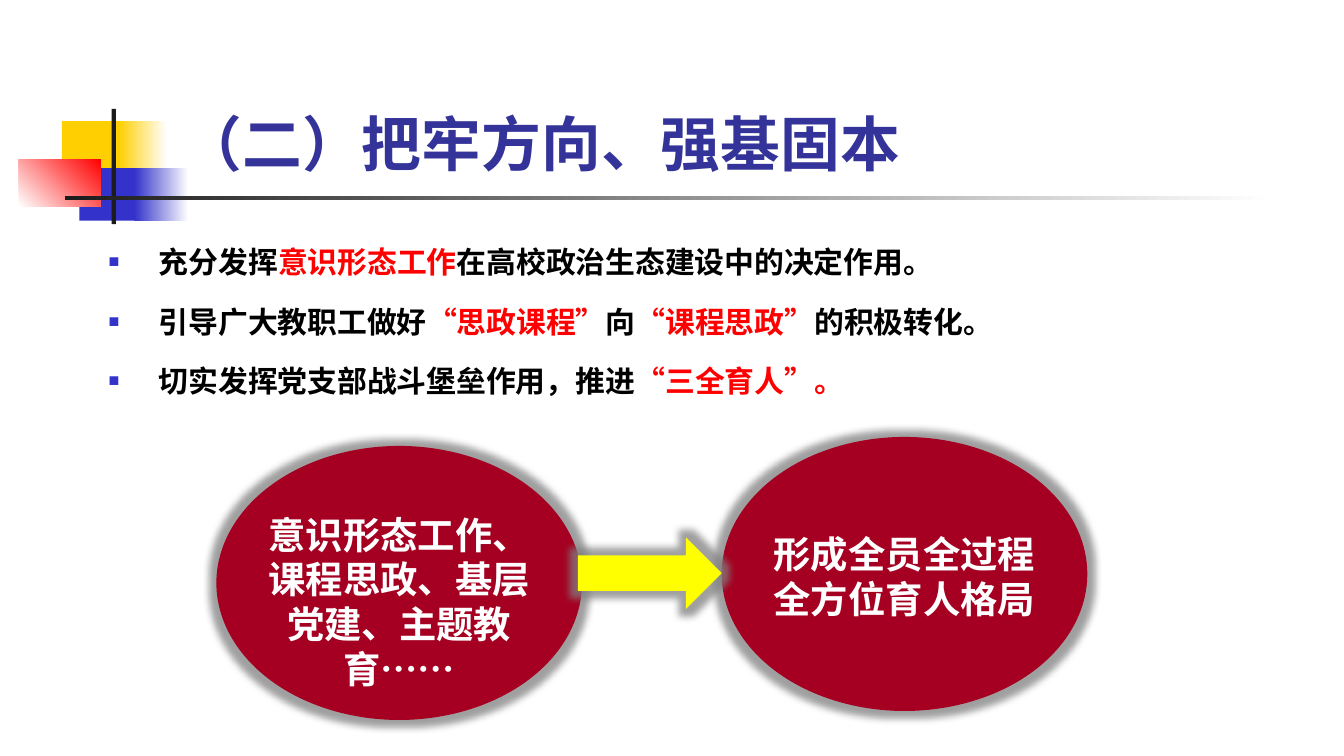
from lxml.etree import SubElement
from pptx import Presentation
from pptx.dml.color import RGBColor
from pptx.enum.shapes import MSO_SHAPE
from pptx.enum.text import MSO_ANCHOR, MSO_AUTO_SIZE, PP_ALIGN
from pptx.oxml.ns import qn
from pptx.util import Cm, Pt

HUES = {
    "gold": "FFCF01", "blue": "3333CC", "red": "FF0000", "dark": "1C1C1C",
    "navy": "333399", "wine": "A50021", "yellow": "FFFF00",
    "black": "000000", "white": "FFFFFF", "gray": "808080",
}
HAN = "Noto Sans CJK SC"


def rgb(hue):
    return RGBColor.from_string(HUES[hue])


def write(para, text, size=16, font=HAN, hue="black", bold=True):
    run = para.add_run()
    run.text = text
    run.font.size = Pt(size)
    run.font.name = font
    run.font.bold = bold
    run.font.color.rgb = rgb(hue)


class Deck:
    """Holds the style and the current slide."""

    def __init__(self, wide, high):
        self.file = Presentation()
        self.file.slide_width, self.file.slide_height = Cm(wide), Cm(high)
        self.slide = self.file.slides.add_slide(self.file.slide_layouts[1])

    def place(self, shape, box):
        shape.left, shape.top, shape.width, shape.height = map(Cm, box)

    def shape(self, kind, box, hue, fade=None, angle=0, glow=False):
        item = self.slide.shapes.add_shape(kind, *map(Cm, box))
        item.shadow.inherit = False
        item.line.fill.background()
        if fade:
            item.fill.gradient()
            item.fill.gradient_angle = angle
            for stop, name in zip(item.fill.gradient_stops, (hue, fade)):
                stop.color.rgb = rgb(name)
        else:
            item.fill.solid()
            item.fill.fore_color.rgb = rgb(hue)
        if glow:
            effects = item._element.spPr.find(qn("a:effectLst"))
            halo = SubElement(effects, qn("a:glow"), rad=str(Cm(0.28)))
            tint = SubElement(halo, qn("a:srgbClr"), val=HUES["gray"])
            SubElement(tint, qn("a:alpha"), val="75000")

    def title(self, box, text):
        item = self.slide.shapes.title
        self.place(item, box)
        frame = item.text_frame
        frame.vertical_anchor = MSO_ANCHOR.BOTTOM
        frame.auto_size = MSO_AUTO_SIZE.NONE
        para = frame.paragraphs[0]
        para.alignment = PP_ALIGN.LEFT
        write(para, text, size=32, hue="navy")

    def bullet(self, para):
        props = para._p.get_or_add_pPr()
        props.set("marL", str(Cm(0.95)))
        props.set("indent", str(-Cm(0.95)))
        color = SubElement(props, qn("a:buClr"))
        SubElement(color, qn("a:srgbClr"), val=HUES["blue"])
        SubElement(props, qn("a:buSzPct"), val="60000")
        SubElement(props, qn("a:buFont"), typeface="Arial")
        SubElement(props, qn("a:buChar"), char="■")

    def points(self, box, rows):
        item = self.slide.placeholders[1]
        self.place(item, box)
        frame = item.text_frame
        frame.auto_size = MSO_AUTO_SIZE.NONE
        for i, row in enumerate(rows):
            para = frame.add_paragraph() if i else frame.paragraphs[0]
            para.line_spacing = 1.5
            para.space_before = Pt(3.2)
            self.bullet(para)
            # Every second part of a row is stressed
            for j, part in enumerate(row):
                write(para, part, hue="red" if j % 2 else "black")

    def label(self, box, text):
        frame = self.slide.shapes.add_textbox(*map(Cm, box)).text_frame
        frame.word_wrap = True
        frame.auto_size = MSO_AUTO_SIZE.SHAPE_TO_FIT_TEXT
        para = frame.paragraphs[0]
        para.alignment = PP_ALIGN.CENTER
        write(para, text, size=20, font="Arial", hue="white")


def main():
    deck = Deck(25.4, 14.29)
    rect, oval = MSO_SHAPE.RECTANGLE, MSO_SHAPE.OVAL

    # Corner ornament and rule
    deck.shape(rect, (1.17, 2.29, 1.22, 0.99), "gold")
    deck.shape(rect, (2.24, 2.29, 0.91, 0.99), "gold", fade="white")
    deck.shape(rect, (1.5, 3.18, 1.17, 0.99), "blue")
    deck.shape(rect, (2.54, 3.18, 1.02, 0.99), "blue", fade="white")
    deck.shape(rect, (0.36, 3.02, 1.55, 0.89), "white", fade="red", angle=45)
    deck.shape(rect, (2.11, 2.06, 0.08, 2.18), "dark")
    deck.shape(rect, (1.22, 3.71, 22.86, 0.08), "dark", fade="white")

    # Title and list
    deck.title((3.2, 0.46, 21.64, 3.05), "（二）把牢方向、强基固本")
    deck.points((1.8, 4.14, 18.64, 4.9), [
        ("充分发挥", "意识形态工作", "在高校政治生态建设中的决定作用。"),
        ("引导广大教职工做好", "“思政课程”", "向", "“课程思政”",
         "的积极转化。"),
        ("切实发挥党支部战斗堡垒作用，推进", "“三全育人”。"),
    ])

    # Means, arrow and goal
    deck.shape(oval, (13.64, 8.26, 6.91, 5.18), "wine", glow=True)
    deck.shape(oval, (4.09, 8.43, 6.91, 5.18), "wine", glow=True)
    deck.shape(MSO_SHAPE.RIGHT_ARROW, (10.92, 10.16, 2.72, 1.35), "yellow",
               glow=True)
    deck.label((14.25, 9.91, 5.69, 1.96), "形成全员全过程全方位育人格局")
    deck.label((4.7, 9.55, 5.69, 3.68),
               "意识形态工作、课程思政、基层党建、主题教育……")

    deck.file.save("out.pptx")


if __name__ == "__main__":
    main()
